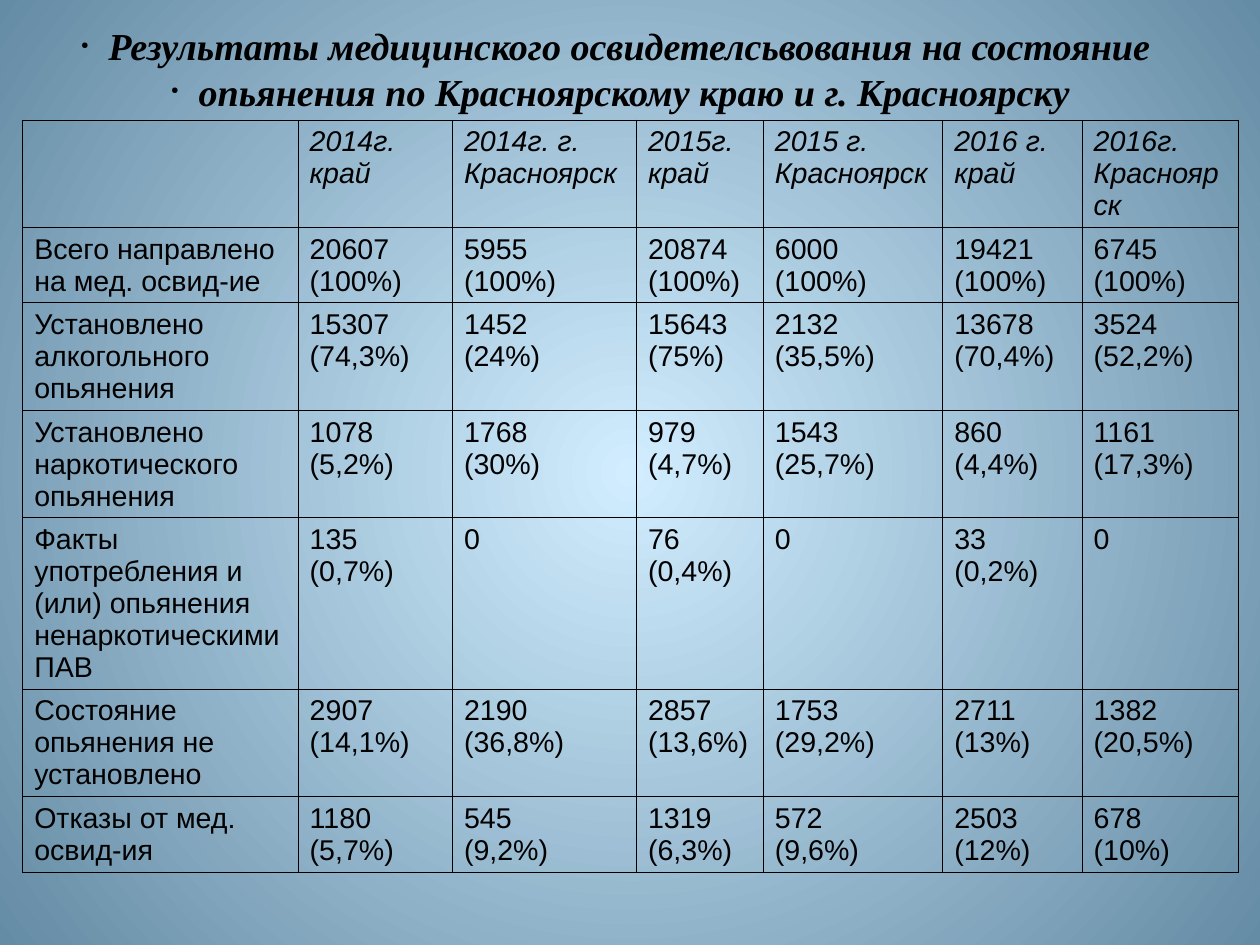
from lxml import etree
from pptx import Presentation
from pptx.dml.color import RGBColor
from pptx.enum.text import MSO_ANCHOR, MSO_AUTO_SIZE, PP_ALIGN
from pptx.oxml.ns import qn
from pptx.util import Inches, Pt

TOP = MSO_ANCHOR.TOP
NO_AUTOFIT = MSO_AUTO_SIZE.NONE
CENTER = PP_ALIGN.CENTER
TITLE_ONLY = 5

CM_PER_INCH = 2.54
SLIDE_WIDTH = Inches(28 / CM_PER_INCH)
SLIDE_HEIGHT = Inches(21 / CM_PER_INCH)

BLACK = "000000"
CENTER_BLUE = "D1EDFF"
EDGE_BLUE = "658CA5"

TITLE_LINES = [
    "Результаты медицинского освидетелсьвования на состояние ",
    "опьянения по Красноярскому краю и г. Красноярску",
]
COLUMN_WIDTHS = [2.41, 1.35, 1.61, 1.11, 1.57, 1.22, 1.37]
ROW_HEIGHTS = [0.94, 0.66, 0.94, 0.94, 1.5, 0.94, 0.66]
HEADERS = ["", "2014г. край", "2014г. г. Красноярск", "2015г. край",
           "2015 г. Красноярск", "2016 г. край", "2016г. Красноярск"]
RESULTS = [
    ("Всего направлено на мед. освид-ие",
     ["20607 (100%)", "5955 (100%)", "20874 (100%)",
      "6000 (100%)", "19421 (100%)", "6745 (100%)"]),
    ("Установлено алкогольного опьянения",
     ["15307 (74,3%)", "1452 (24%)", "15643 (75%)",
      "2132 (35,5%)", "13678 (70,4%)", "3524 (52,2%)"]),
    ("Установлено наркотического опьянения",
     ["1078 (5,2%)", "1768 (30%)", "979 (4,7%)",
      "1543 (25,7%)", "860 (4,4%)", "1161 (17,3%)"]),
    ("Факты употребления и (или) опьянения ненаркотическими ПАВ",
     ["135 (0,7%)", "0", "76 (0,4%)", "0", "33 (0,2%)", "0"]),
    ("Состояние опьянения не установлено",
     ["2907 (14,1%)", "2190 (36,8%)", "2857 (13,6%)",
      "1753 (29,2%)", "2711 (13%)", "1382 (20,5%)"]),
    ("Отказы от мед. освид-ия",
     ["1180 (5,7%)", "545 (9,2%)", "1319 (6,3%)",
      "572 (9,6%)", "2503 (12%)", "678 (10%)"]),
]


def color(hex_text):
    return RGBColor.from_string(hex_text)


def set_font(para, name, size, bold=False, italic=False):
    font = para.font
    font.name = name
    font.size = Pt(size)
    font.bold = bold
    font.italic = italic
    font.color.rgb = color(BLACK)


def paint_background(slide):
    """Fill the slide with a circular gradient that is lightest in the middle."""
    fill = slide.background.fill
    fill.gradient()
    for stop, shade in zip(fill.gradient_stops, [CENTER_BLUE, EDGE_BLUE]):
        stop.color.rgb = color(shade)
    gradient = next(slide.element.iter(qn("a:gradFill")))
    linear = gradient.find(qn("a:lin"))
    if linear is not None:
        gradient.remove(linear)
    circle = etree.SubElement(gradient, qn("a:path"), path="circle")
    etree.SubElement(circle, qn("a:fillToRect"),
                     l="50000", t="50000", r="50000", b="50000")


def add_bullet(para):
    properties = para._p.get_or_add_pPr()
    properties.set("marL", str(Inches(0.03)))
    properties.set("indent", str(Inches(-0.24)))
    etree.SubElement(properties, qn("a:buSzPct"), val="25000")
    etree.SubElement(properties, qn("a:buChar"), char="●")


def write_title(slide):
    title = slide.shapes.title
    title.left, title.top = Inches(0.2), Inches(0.2)
    title.width, title.height = Inches(10.63), Inches(7.86)
    frame = title.text_frame
    frame.word_wrap = True
    frame.auto_size = NO_AUTOFIT
    frame.vertical_anchor = TOP
    frame.margin_left = frame.margin_right = 0
    frame.margin_top = frame.margin_bottom = 0
    frame.text = "\n".join(TITLE_LINES)
    for para in frame.paragraphs:
        add_bullet(para)
        para.alignment = CENTER
        set_font(para, "Times New Roman", 24, bold=True, italic=True)


def add_borders(cell):
    properties = cell._tc.get_or_add_tcPr()
    for position, side in enumerate(["a:lnL", "a:lnR", "a:lnT", "a:lnB"]):
        line = etree.Element(qn(side), w=str(Pt(0.75)))
        fill = etree.SubElement(line, qn("a:solidFill"))
        etree.SubElement(fill, qn("a:srgbClr"), val=BLACK)
        properties.insert(position, line)


def fill_cell(cell, text, italic=False):
    cell.fill.background()
    add_borders(cell)
    cell.text = text
    for para in cell.text_frame.paragraphs:
        set_font(para, "Arial", 18, italic=italic)


def add_results_table(slide):
    frame = slide.shapes.add_table(
        len(ROW_HEIGHTS), len(COLUMN_WIDTHS), Inches(0.2), Inches(1.05),
        Inches(sum(COLUMN_WIDTHS)), Inches(sum(ROW_HEIGHTS)))
    table = frame.table
    table.first_row = False
    table.horz_banding = False
    for column, width in zip(table.columns, COLUMN_WIDTHS):
        column.width = Inches(width)
    for row, height in zip(table.rows, ROW_HEIGHTS):
        row.height = Inches(height)

    for column, header in enumerate(HEADERS):
        fill_cell(table.cell(0, column), header, italic=True)
    for row, (label, values) in enumerate(RESULTS, start=1):
        fill_cell(table.cell(row, 0), label)
        for column, value in enumerate(values, start=1):
            fill_cell(table.cell(row, column), value.replace(" ", "\n"))


def main():
    deck = Presentation()
    deck.slide_width, deck.slide_height = SLIDE_WIDTH, SLIDE_HEIGHT
    slide = deck.slides.add_slide(deck.slide_layouts[TITLE_ONLY])
    paint_background(slide)
    write_title(slide)
    add_results_table(slide)
    deck.save("out.pptx")


if __name__ == "__main__":
    main()
